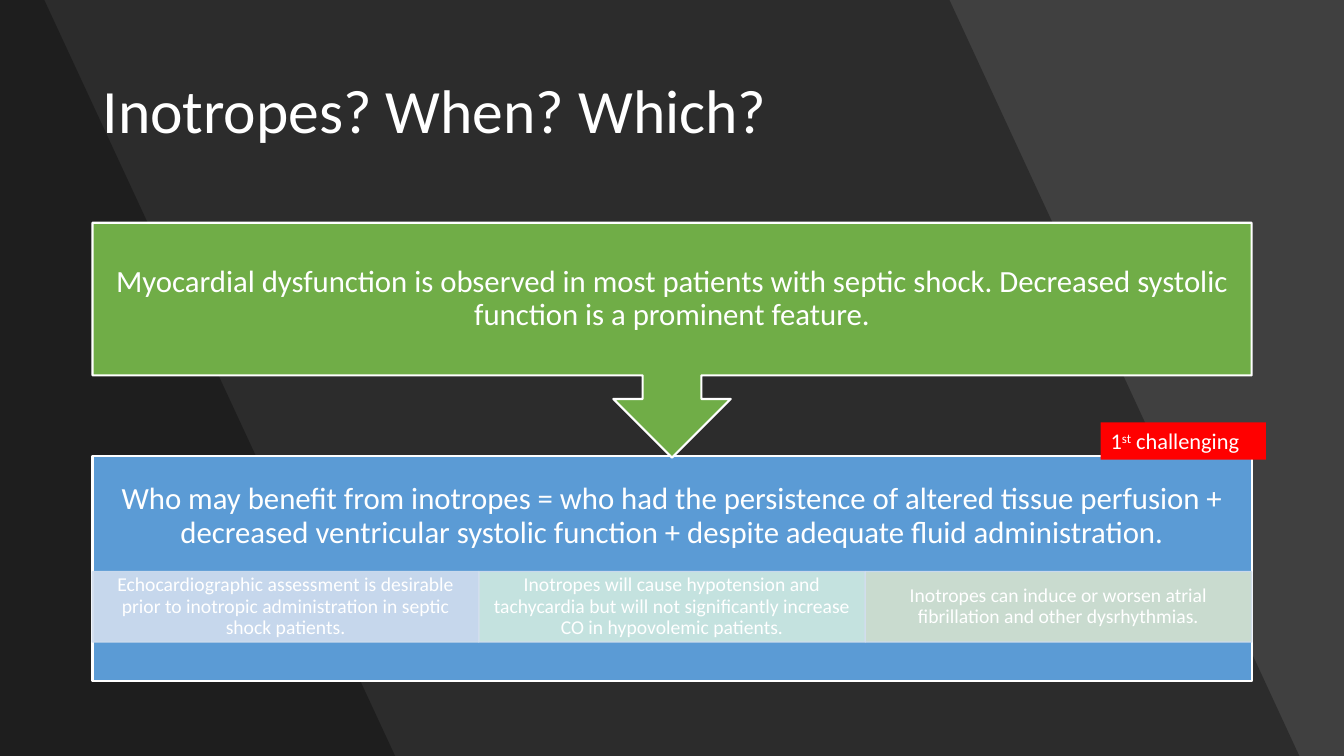
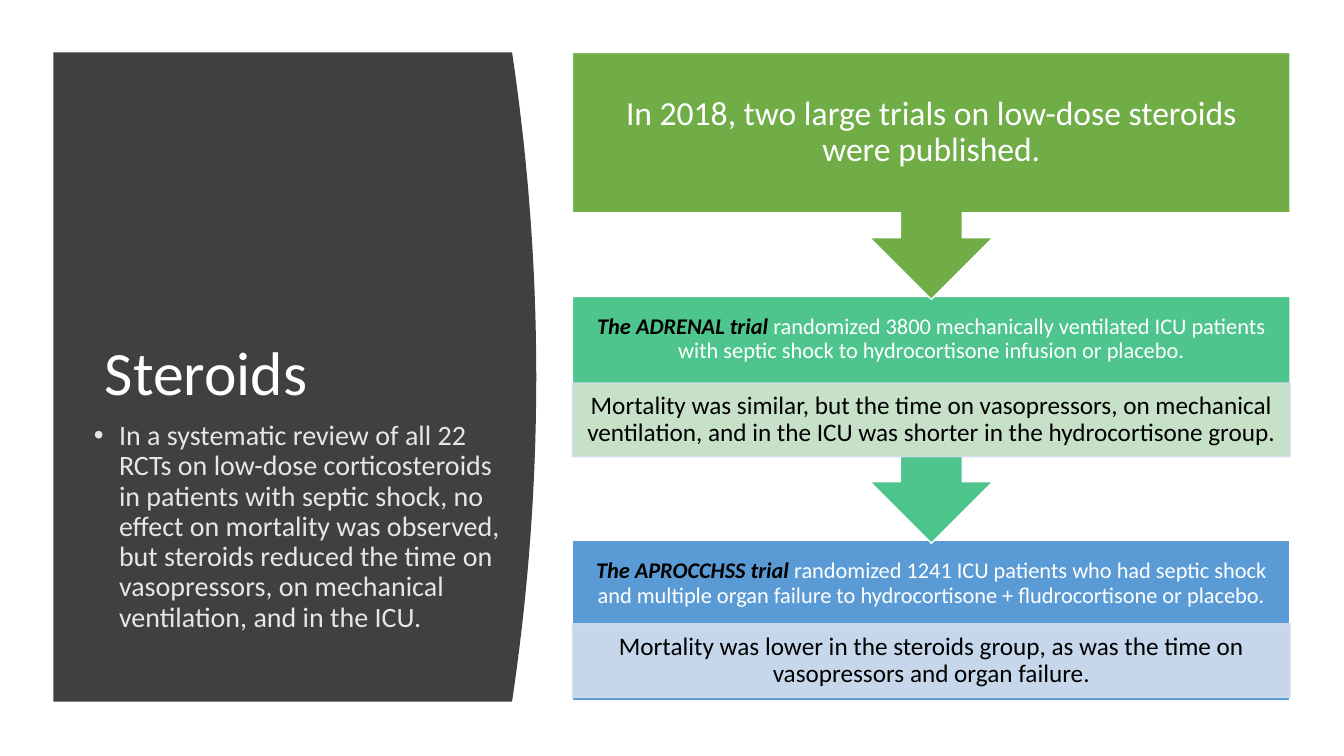
"""Build two slides on inotropes and steroids in septic shock."""
from dataclasses import dataclass

from lxml import etree
from pptx import Presentation
from pptx.dml.color import RGBColor
from pptx.enum.shapes import MSO_SHAPE
from pptx.enum.text import MSO_ANCHOR, MSO_AUTO_SIZE, PP_ALIGN
from pptx.oxml.ns import qn
from pptx.util import Inches, Pt

RECTANGLE, CALLOUT = MSO_SHAPE.RECTANGLE, MSO_SHAPE.DOWN_ARROW_CALLOUT
LEFT, CENTER = PP_ALIGN.LEFT, PP_ALIGN.CENTER
TOP, MIDDLE = MSO_ANCHOR.TOP, MSO_ANCHOR.MIDDLE
NO_AUTOFIT = MSO_AUTO_SIZE.NONE

SLIDE_WIDTH, SLIDE_HEIGHT = Inches(13.333), Inches(7.5)
FONT = "Calibri"
LINE_SPACING = 0.9
CALLOUT_BODY_SHARE = 0.65
SIDE_MARGIN_SHARE, THIN_MARGIN_SHARE = 0.56, 0.1
COLORS = {
    "white": "FFFFFF", "black": "000000", "charcoal": "404040",
    "gray": "E7E6E6", "blue": "5B9BD5", "green": "70AD47",
    "teal": "4DC58D", "red": "FF0000", "pale_blue": "D2DEEF",
    "pale_teal": "D0EAE1", "pale_green": "D5E3CF",
}


@dataclass(frozen=True)
class Box:
    """Position and size in percent of the slide."""
    left: float
    top: float
    width: float
    height: float

    def lengths(self) -> tuple[int, int, int, int]:
        """Return the box in slide units."""
        return (across(self.left), down(self.top),
                across(self.width), down(self.height))


@dataclass(frozen=True)
class TextRun:
    """A piece of text with its own format."""
    text: str
    color: str = "white"
    strong: bool = False
    raised: bool = False


@dataclass(frozen=True)
class Step:
    """A block of a process, whose text may fill only its upper part."""
    kind: int
    box: Box
    color: str
    size: int
    runs: list[TextRun]
    line_width: float
    text_height: float | None = None


@dataclass(frozen=True)
class Detail:
    """A pale box inside a step."""
    box: Box
    color: str
    size: int
    run: TextRun


def across(share: float) -> int:
    """Turn a percentage of the slide width into a length."""
    return round(SLIDE_WIDTH * share / 100)


def down(share: float) -> int:
    """Turn a percentage of the slide height into a length."""
    return round(SLIDE_HEIGHT * share / 100)


def color_of(name: str) -> RGBColor:
    """Look up a palette colour."""
    return RGBColor.from_string(COLORS[name])


def set_opacity(shape, percent: int) -> None:
    """Make the fill and line of a shape translucent."""
    for color in shape._element.spPr.iter(qn("a:srgbClr")):
        etree.SubElement(color, qn("a:alpha"), val=str(percent * 1000))


def set_background(slide, color: str) -> None:
    """Fill the slide background."""
    slide.background.fill.solid()
    slide.background.fill.fore_color.rgb = color_of(color)


def write(frame, runs: list[TextRun], size: int, alignment=CENTER,
          anchor=MIDDLE, spacing: float = LINE_SPACING):
    """Write one paragraph run by run and return it."""
    frame.word_wrap = True
    frame.auto_size = NO_AUTOFIT
    frame.vertical_anchor = anchor
    paragraph = frame.paragraphs[0]
    paragraph.alignment = alignment
    paragraph.line_spacing = spacing
    for item in runs:
        run = paragraph.add_run()
        run.text = item.text
        run.font.name, run.font.size = FONT, Pt(size)
        run.font.color.rgb = color_of(item.color)
        if item.strong:
            run.font.bold = run.font.italic = True
        if item.raised:
            run.font._element.set("baseline", "30000")
    return paragraph


def set_margins(frame, side: float, vertical: float) -> None:
    """Set text margins in points."""
    frame.margin_left = frame.margin_right = Pt(side)
    frame.margin_top = frame.margin_bottom = Pt(vertical)


def add_block(slide, kind: int, box: Box, fill: str,
              line: str | None = None, line_width: float = 1):
    """Add a flat preset shape."""
    shape = slide.shapes.add_shape(kind, *box.lengths())
    shape.shadow.inherit = False
    shape.fill.solid()
    shape.fill.fore_color.rgb = color_of(fill)
    if line:
        shape.line.color.rgb = color_of(line)
        shape.line.width = Pt(line_width)
    else:
        shape.line.fill.background()
    return shape


def add_step(slide, step: Step) -> None:
    """Draw a process block with its text."""
    shape = add_block(slide, step.kind, step.box, step.color, "white", step.line_width)
    frame = shape.text_frame
    margin = step.size * SIDE_MARGIN_SHARE
    set_margins(frame, margin, margin)
    if step.text_height is not None:
        share = CALLOUT_BODY_SHARE if step.kind == CALLOUT else 1
        spare = step.box.height * share - step.text_height
        frame.margin_bottom = Pt(margin) + down(spare)
    write(frame, step.runs, step.size)


def add_detail(slide, detail: Detail) -> None:
    """Draw a translucent box with its text."""
    shape = add_block(slide, RECTANGLE, detail.box, detail.color, "pale_blue")
    set_opacity(shape, 90)
    set_margins(shape.text_frame, detail.size * SIDE_MARGIN_SHARE,
                detail.size * THIN_MARGIN_SHARE)
    write(shape.text_frame, [detail.run], detail.size)


def add_backdrop(slide, points: list[tuple[float, float]], color: str):
    """Draw an outline behind everything else on the slide."""
    corners = [(across(x), down(y)) for x, y in points]
    builder = slide.shapes.build_freeform(*corners[0])
    builder.add_line_segments(corners[1:], close=True)
    shape = builder.convert_to_shape()
    shape.shadow.inherit = False
    shape.fill.solid()
    shape.fill.fore_color.rgb = color_of(color)
    shape.line.fill.background()
    slide.shapes._spTree.insert(2, shape._element)
    return shape


def place(shape, box: Box) -> None:
    """Move and size a placeholder."""
    shape.left, shape.top, shape.width, shape.height = box.lengths()


def add_slide(presentation, layout: int, background: str, title: str, box: Box):
    """Add a slide with its background and title."""
    slide = presentation.slides.add_slide(presentation.slide_layouts[layout])
    set_background(slide, background)
    place(slide.shapes.title, box)
    write(slide.shapes.title.text_frame, [TextRun(title)], 44, LEFT)
    return slide


def build_inotropes(presentation) -> None:
    """Build the slide on inotropes."""
    left, width = 6.88, 86.25
    slide = add_slide(presentation, 5, "charcoal", "Inotropes? When? Which?",
                      Box(left, 5.33, width, 19.33))
    for upper, lower in ((70.65, 96.68), (3.3, 29.4)):
        band = add_backdrop(slide, [(0, 0), (upper, 0), (lower, 100), (0, 100)], "black")
        set_opacity(band, 30)

    add_step(slide, Step(RECTANGLE, Box(left, 60.27, width, 29.87), "blue", 22, [TextRun(
        "Who may benefit from inotropes = who had the persistence of altered tissue "
        "perfusion + decreased ventricular systolic function + despite adequate fluid "
        "administration.")], 1.5, 16.13))
    cautions = (
        ("pale_blue", "Echocardiographic assessment is desirable prior to inotropic "
         "administration in septic shock patients."),
        ("pale_teal", "Inotropes will cause hypotension and tachycardia but will not "
         "significantly increase CO in hypovolemic patients."),
        ("pale_green", "Inotropes can induce or worsen atrial fibrillation and other "
         "dysrhythmias."),
    )
    column = width / len(cautions)
    for index, (color, text) in enumerate(cautions):
        box = Box(left + index * column, 75.6, column, 9.33)
        add_detail(slide, Detail(box, color, 14, TextRun(text)))
    add_step(slide, Step(CALLOUT, Box(left, 29.47, width, 31.07), "green", 22, [TextRun(
        "Myocardial dysfunction is observed in most patients with septic shock. "
        "Decreased systolic function is a prominent feature.")], 1.5))

    tag = add_block(slide, RECTANGLE, Box(81.9, 55.87, 12.3, 4.93), "red")
    tag_runs = [TextRun("1"), TextRun("st", raised=True), TextRun(" challenging")]
    write(tag.text_frame, tag_runs, 16, LEFT, TOP, 1.0)


def build_steroids(presentation) -> None:
    """Build the slide on steroids."""
    slide = add_slide(presentation, 1, "white", "Steroids", Box(7.05, 14.8, 28.05, 69.87))
    panel_left, edge, bulge, top, bottom = 3.98, 38.1, 1.8, 6.93, 92.8
    segments = 40
    curve = [(edge + bulge * (1 - (2 * index / segments - 1) ** 2),
              top + (bottom - top) * index / segments) for index in range(segments + 1)]
    add_backdrop(slide, [(panel_left, top), *curve, (panel_left, bottom)], "charcoal")

    body = slide.placeholders[1]
    place(body, Box(6.23, 55.07, 33, 32.13))
    paragraph = write(body.text_frame, [TextRun(
        "In a systematic review of all 22 RCTs on low-dose corticosteroids in patients "
        "with septic shock, no effect on mortality was observed, but steroids reduced "
        "the time on vasopressors, on mechanical ventilation, and in the ICU.", "gray")],
        20, LEFT, TOP)
    paragraph.space_before = Pt(10)
    properties = paragraph._p.get_or_add_pPr()
    properties.set("marL", str(Inches(0.25)))
    properties.set("indent", str(-Inches(0.25)))

    left, width, pitch, text_height = 42.6, 53.4, 32.27, 11.47
    callout_height, block_height, result_height = 32.67, 21.2, 9.73
    add_step(slide, Step(RECTANGLE, Box(left, top + 2 * pitch, width, block_height), "blue", 16, [
        TextRun("The APROCCHSS trial ", "black", True),
        TextRun("randomized 1241 ICU patients who had septic shock and multiple organ "
                "failure to hydrocortisone + fludrocortisone or placebo.")], 1, text_height))
    add_detail(slide, Detail(Box(left, 82.53, width, result_height), "pale_blue", 18, TextRun(
        "Mortality was lower in the steroids group, as was the time on vasopressors "
        "and organ failure.", "black")))
    add_step(slide, Step(CALLOUT, Box(left, top + pitch, width, callout_height), "teal", 16, [
        TextRun("The ADRENAL trial ", "black", True),
        TextRun("randomized 3800 mechanically ventilated ICU patients with septic shock "
                "to hydrocortisone infusion or placebo.")], 1, text_height))
    add_detail(slide, Detail(Box(left, 50.67, width, result_height), "pale_green", 18, TextRun(
        "Mortality was similar, but the time on vasopressors, on mechanical ventilation, "
        "and in the ICU was shorter in the hydrocortisone group.", "black")))
    add_step(slide, Step(CALLOUT, Box(left, top, width, callout_height), "green", 24, [TextRun(
        "In 2018, two large trials on low-dose steroids were published.")], 1))


def main() -> None:
    """Build and save the presentation."""
    presentation = Presentation()
    presentation.slide_width, presentation.slide_height = SLIDE_WIDTH, SLIDE_HEIGHT
    build_inotropes(presentation)
    build_steroids(presentation)
    presentation.save("out.pptx")


if __name__ == "__main__":
    main()
